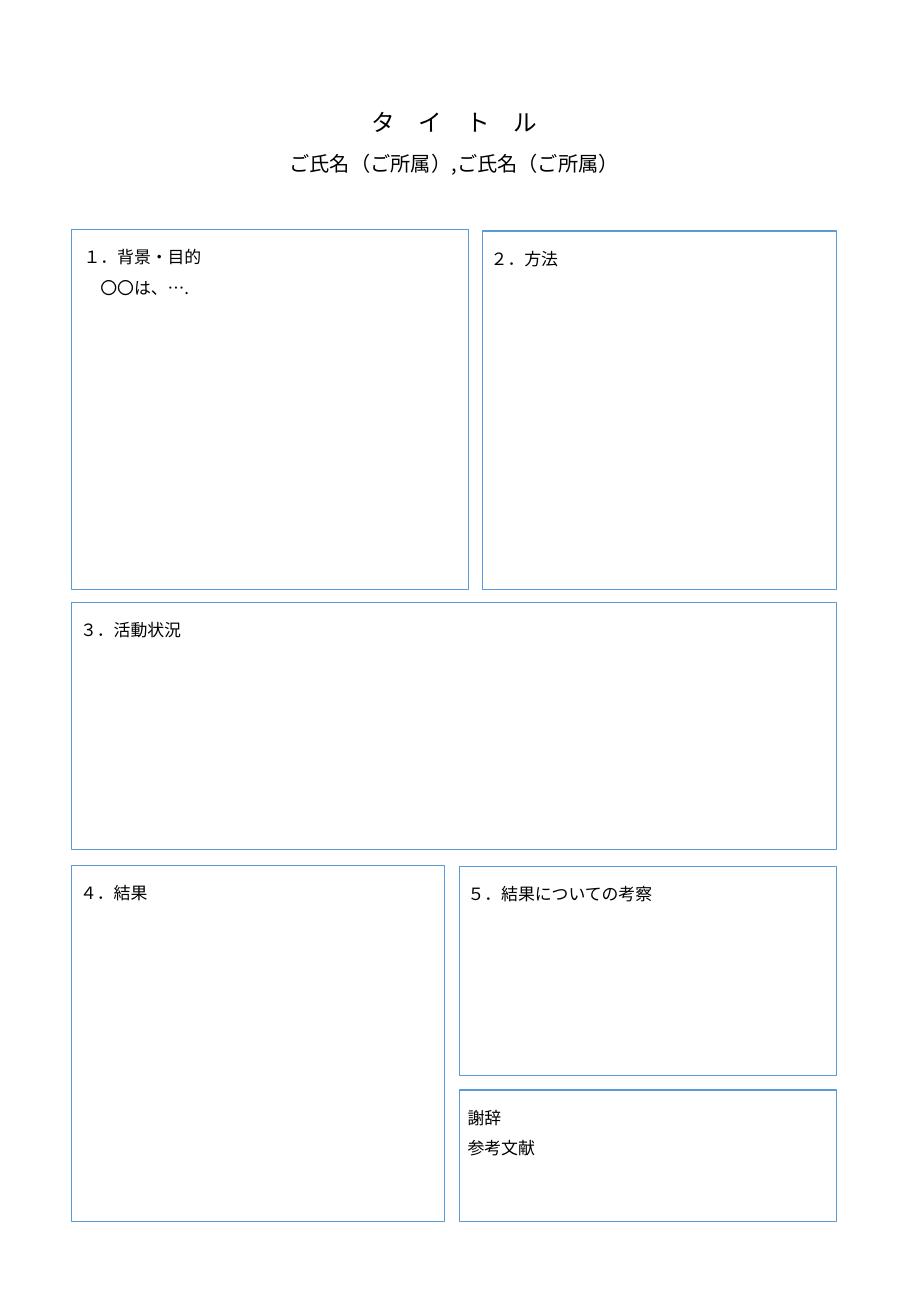
from lxml.etree import SubElement
from pptx import Presentation
from pptx.dml.color import RGBColor
from pptx.enum.lang import MSO_LANGUAGE_ID
from pptx.enum.shapes import MSO_SHAPE
from pptx.enum.text import MSO_ANCHOR, PP_ALIGN
from pptx.oxml.ns import qn
from pptx.util import Emu, Pt

FONT = "Noto Sans CJK JP"
LEFT = 59
WIDTH = 630
RIGHT = LEFT + WIDTH


def px(length):
    return Emu(length * 9144)


def color(value):
    return RGBColor.from_string(value)


def add_run(paragraph, text, size):
    run = paragraph.add_run()
    run.text = text
    run.font.size = Pt(size)
    run.font.color.rgb = color("000000")
    run.font.language_id = MSO_LANGUAGE_ID.JAPANESE
    run.font.name = FONT
    SubElement(run._r.get_or_add_rPr(), qn("a:ea"), typeface=FONT)


def set_frame(frame, anchor, side, edge):
    frame.word_wrap = True
    frame.vertical_anchor = anchor
    frame.margin_left = frame.margin_right = px(side)
    frame.margin_top = frame.margin_bottom = px(edge)


def add_lines(frame, lines, alignment, spacing, gap=0):
    for index, (text, size) in enumerate(lines):
        paragraph = frame.add_paragraph() if index else frame.paragraphs[0]
        paragraph.alignment = alignment
        paragraph.line_spacing = spacing
        if index and gap:
            paragraph.space_before = Pt(gap)
        add_run(paragraph, text, size)


def add_heading(slide, box):
    frame = slide.shapes.add_textbox(*map(px, box)).text_frame
    set_frame(frame, MSO_ANCHOR.MIDDLE, 10, 8)
    lines = [("タ　イ　ト　ル", 14), ("ご氏名（ご所属）,ご氏名（ご所属）", 12)]
    add_lines(frame, lines, PP_ALIGN.CENTER, 0.9, gap=10)


def add_section(slide, box, texts, side=7):
    shape = slide.shapes.add_shape(MSO_SHAPE.RECTANGLE, *map(px, box))
    shape.shadow.inherit = False
    shape.fill.background()
    shape.line.color.rgb = color("5B9BD5")
    shape.line.width = Pt(0.75)
    set_frame(shape.text_frame, MSO_ANCHOR.TOP, side, 6)
    add_lines(shape.text_frame, [(text, 10) for text in texts], PP_ALIGN.LEFT, 1.5)


def main():
    presentation = Presentation()
    presentation.slide_width = px(750)
    presentation.slide_height = px(1083)
    slide = presentation.slides.add_slide(presentation.slide_layouts[6])

    add_heading(slide, (LEFT, 59, WIDTH, 118))
    add_section(slide, (LEFT, 189, 327, 296), ["１．背景・目的", "　〇〇は、…."], side=10)
    add_section(slide, (397, 190, RIGHT - 397, 295), ["２．方法"])
    add_section(slide, (LEFT, 496, WIDTH, 203), ["３．活動状況"])
    add_section(slide, (LEFT, 712, 307, 293), ["４．結果"])
    add_section(slide, (378, 713, RIGHT - 378, 172), ["５．結果についての考察"])
    add_section(slide, (378, 897, RIGHT - 378, 108), ["謝辞", "参考文献"])

    presentation.save("out.pptx")


if __name__ == "__main__":
    main()
